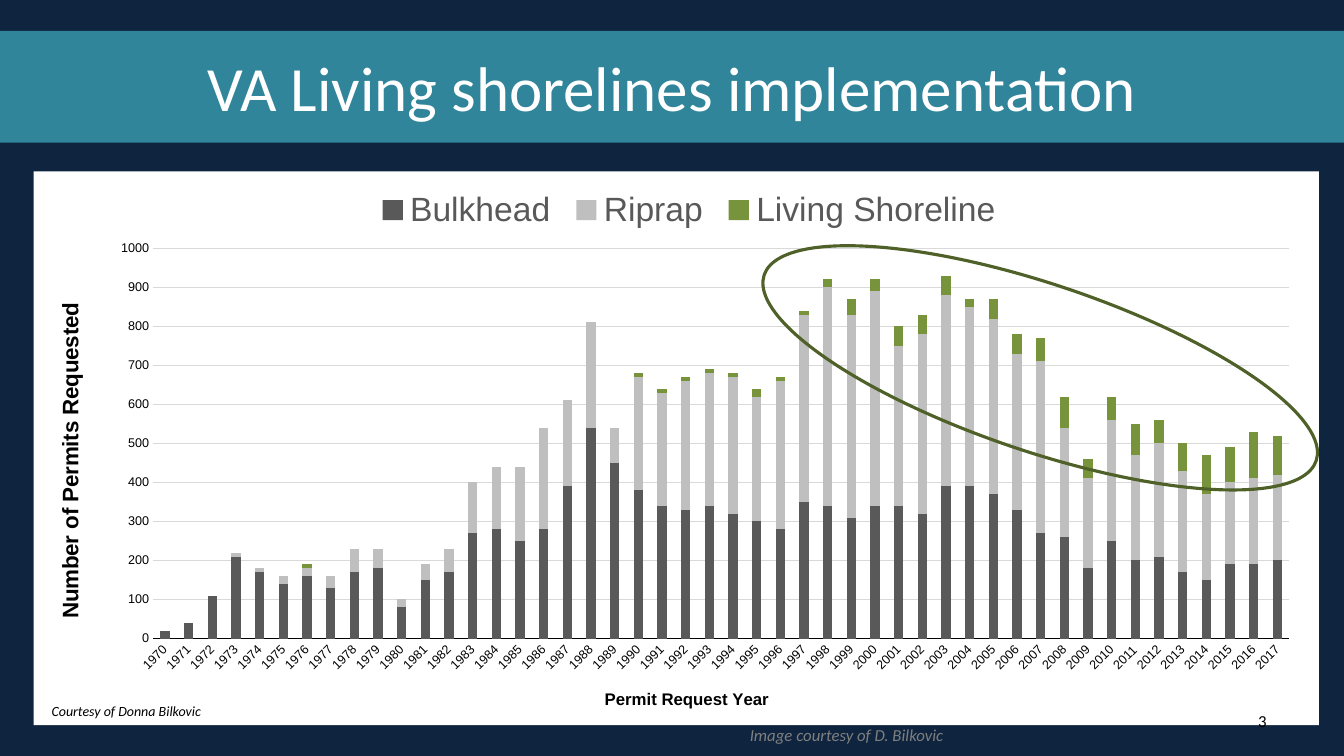
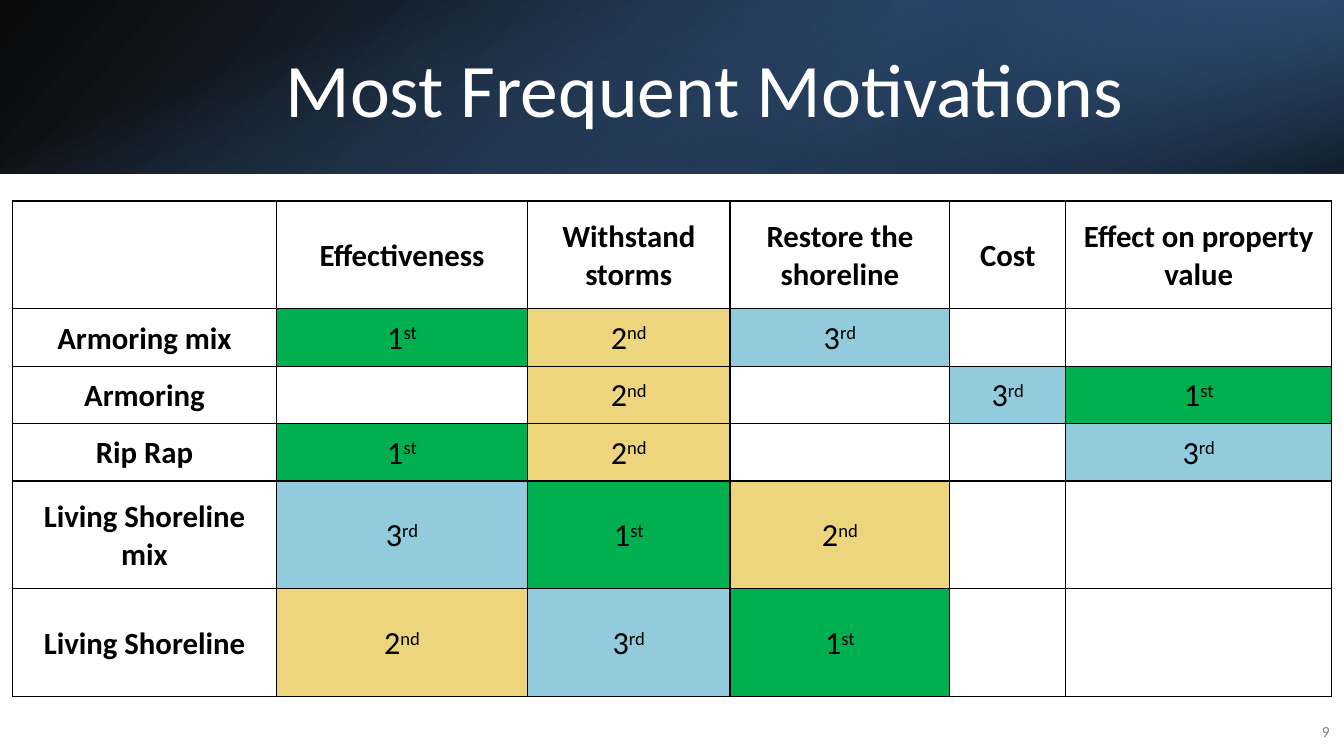
from dataclasses import dataclass
from typing import NamedTuple

import lxml.etree
import pptx
import pptx.chart.data
import pptx.dml.color
import pptx.enum.chart
import pptx.enum.shapes
import pptx.enum.text
import pptx.oxml
import pptx.oxml.ns
import pptx.util

Pt = pptx.util.Pt
qn = pptx.oxml.ns.qn
ALIGN = pptx.enum.text.PP_ALIGN
ANCHOR = pptx.enum.text.MSO_ANCHOR
SHAPE = pptx.enum.shapes.MSO_SHAPE
XL = pptx.enum.chart

COLORS = {
    "navy": "0F243E", "teal": "31859B", "white": "FFFFFF", "black": "000000",
    "gray": "7F7F7F", "dark_gray": "595959", "silver": "BFBFBF", "grid": "D9D9D9",
    "olive": "77933C", "dark_olive": "4F6128", "green": "00B050", "sand": "EDD57E",
    "sky": "92CCDC", "deep_blue": "244061", "mid_blue": "366092", "blue": "4F81BD",
}
SLIDE_W, SLIDE_H = 960, 540
HEADER_H = 123.8


class Box(NamedTuple):
    x: float
    y: float
    w: float
    h: float


class Stop(NamedTuple):
    pos: int
    color: str
    alpha: int


class Series(NamedTuple):
    name: str
    color: str
    values: tuple[int, ...]


class Rank(NamedTuple):
    digit: str
    suffix: str
    color: str


@dataclass(frozen=True)
class Label:
    text: str
    box: Box
    size: float
    color: str = "black"
    align: ALIGN = ALIGN.RIGHT
    anchor: ANCHOR = ANCHOR.MIDDLE
    italic: bool = False


@dataclass(frozen=True)
class GradientPanel:
    box: Box
    angle: int
    stops: tuple[Stop, ...]
    rotation: int = 0
    flip: bool = True


FIRST_YEAR = 1970
PERMITS = (
    Series("Bulkhead", "dark_gray", (
        20, 40, 110, 210, 170, 140, 160, 130, 170, 180, 80, 150, 170, 270, 280, 250,
        280, 390, 540, 450, 380, 340, 330, 340, 320, 300, 280, 350, 340, 310, 340, 340,
        320, 390, 390, 370, 330, 270, 260, 180, 250, 200, 210, 170, 150, 190, 190, 200)),
    Series("Riprap", "silver", (
        0, 0, 0, 10, 10, 20, 20, 30, 60, 50, 20, 40, 60, 130, 160, 190,
        260, 220, 270, 90, 290, 290, 330, 340, 350, 320, 380, 480, 560, 520, 550, 410,
        460, 490, 460, 450, 400, 440, 280, 230, 310, 270, 290, 260, 220, 210, 220, 220)),
    Series("Living Shoreline", "olive", (
        0, 0, 0, 0, 0, 0, 10, 0, 0, 0, 0, 0, 0, 0, 0, 0,
        0, 0, 0, 0, 10, 10, 10, 10, 10, 20, 10, 10, 20, 40, 30, 50,
        50, 50, 20, 50, 50, 60, 80, 50, 60, 80, 60, 70, 100, 90, 120, 100)),
)

HEADER_PANELS = (
    GradientPanel(Box(0, 0, SLIDE_W, HEADER_H), 140,
                  (Stop(0, "black", 96), Stop(100, "mid_blue", 100))),
    GradientPanel(Box(640, 0, 320, HEADER_H), 320,
                  (Stop(0, "deep_blue", 68), Stop(19, "deep_blue", 68), Stop(100, "blue", 79)),
                  rotation=180),
    GradientPanel(Box((SLIDE_W - HEADER_H) / 2, (HEADER_H - SLIDE_W) / 2, HEADER_H, SLIDE_W), 340,
                  (Stop(0, "blue", 0), Stop(23, "blue", 0),
                   Stop(99, "black", 74), Stop(100, "black", 74)),
                  rotation=90, flip=False),
)

RANKS = {
    1: Rank("1", "st", "green"),
    2: Rank("2", "nd", "sand"),
    3: Rank("3", "rd", "sky"),
}
MOTIVATIONS = ("", "Effectiveness", "Withstand storms", "Restore the shoreline",
               "Cost", "Effect on property value")
ANSWERS = (
    ("Armoring mix", 1, 2, 3, 0, 0),
    ("Armoring", 0, 2, 0, 3, 1),
    ("Rip Rap", 1, 2, 0, 0, 3),
    ("Living Shoreline mix", 3, 1, 2, 0, 0),
    ("Living Shoreline", 2, 3, 1, 0, 0),
)
COL_WIDTHS = (188.6, 179.3, 144.7, 157, 82.8, 190.1)
ROW_HEIGHTS = (77, 41, 41, 41, 77, 77)


def rgb(name: str):
    return pptx.dml.color.RGBColor.from_string(COLORS[name])


def pts(box: Box) -> list:
    return [Pt(v) for v in box]


def style_font(font, size: float, color: str, name: str = "Calibri",
               bold: bool = False, italic: bool = False) -> None:
    font.name, font.size, font.bold, font.italic = name, Pt(size), bold, italic
    font.color.rgb = rgb(color)


def add_run(p, text: str, size: float, color: str = "black", **style):
    r = p.add_run()
    r.text = text
    style_font(r.font, size, color, **style)
    return r


def add_label(s, label: Label) -> None:
    tf = s.shapes.add_textbox(*pts(label.box)).text_frame
    tf.word_wrap = True
    tf.vertical_anchor = label.anchor
    p = tf.paragraphs[0]
    p.alignment = label.align
    add_run(p, label.text, label.size, label.color, italic=label.italic)


def add_title(s, text: str, box: Box, size: float) -> None:
    add_label(s, Label(text, box, size, "white", ALIGN.CENTER))


def add_plain_shape(s, kind, box: Box):
    sp = s.shapes.add_shape(kind, *pts(box))
    sp.shadow.inherit = False
    sp.line.fill.background()
    return sp


def add_panel(s, panel: GradientPanel) -> None:
    sp = add_plain_shape(s, SHAPE.RECTANGLE, panel.box)
    sp.rotation = panel.rotation
    spPr = sp._element.spPr
    if panel.flip:
        spPr.find(qn("a:xfrm")).set("flipH", "1")
    grad = lxml.etree.Element(qn("a:gradFill"), rotWithShape="1")
    stops = lxml.etree.SubElement(grad, qn("a:gsLst"))
    for stop in panel.stops:
        gs = lxml.etree.SubElement(stops, qn("a:gs"), pos=str(stop.pos * 1000))
        color = lxml.etree.SubElement(gs, qn("a:srgbClr"), val=COLORS[stop.color])
        lxml.etree.SubElement(color, qn("a:alpha"), val=str(stop.alpha * 1000))
    lxml.etree.SubElement(grad, qn("a:lin"), ang=str(panel.angle * 60000), scaled="0")
    spPr.find(qn("a:prstGeom")).addnext(grad)


def set_layout(parent, index: int, **values) -> None:
    for old in parent.findall(qn("c:layout")):
        parent.remove(old)
    layout = lxml.etree.Element(qn("c:layout"))
    manual = lxml.etree.SubElement(layout, qn("c:manualLayout"))
    for tag, value in values.items():
        lxml.etree.SubElement(manual, qn(f"c:{tag}"), val=str(value))
    parent.insert(index, layout)


def style_axis(axis, title: str, size: float, x: float, y: float) -> None:
    add_run(axis.axis_title.text_frame.paragraphs[0], title, size, name="Arial", bold=True)
    set_layout(axis.axis_title._element, 1, xMode="edge", yMode="edge", x=x, y=y)
    axis.major_tick_mark = axis.minor_tick_mark = XL.XL_TICK_MARK.NONE
    style_font(axis.tick_labels.font, 9, "black", "Arial")


def add_permit_chart(s, box: Box) -> None:
    data = pptx.chart.data.CategoryChartData()
    data.categories = [str(FIRST_YEAR + i) for i in range(len(PERMITS[0].values))]
    for series in PERMITS:
        data.add_series(series.name, series.values)
    chart = s.shapes.add_chart(XL.XL_CHART_TYPE.COLUMN_STACKED, *pts(box), data).chart
    chart.has_title = False
    style_font(chart.font, 10, "black", "Arial")

    spPr = lxml.etree.Element(qn("c:spPr"))
    fill = lxml.etree.SubElement(spPr, qn("a:solidFill"))
    lxml.etree.SubElement(fill, qn("a:srgbClr"), val=COLORS["white"])
    line = lxml.etree.SubElement(spPr, qn("a:ln"))
    lxml.etree.SubElement(line, qn("a:noFill"))
    chart._chartSpace.find(qn("c:txPr")).addprevious(spPr)
    set_layout(chart._chartSpace.chart.plotArea, 0, layoutTarget="inner",
               xMode="edge", yMode="edge", x=0.093, y=0.139, w=0.884, h=0.705)

    chart.has_legend = True
    chart.legend.position = XL.XL_LEGEND_POSITION.TOP
    chart.legend.include_in_layout = False
    style_font(chart.legend.font, 24, "dark_gray", "Arial")
    set_layout(chart.legend._element, 1, xMode="edge", yMode="edge",
               x=0.26, y=0.03, w=0.5, h=0.08)

    plot = chart.plots[0]
    plot.gap_width, plot.overlap, plot.vary_by_categories = 150, 100, False
    for bars, series in zip(plot.series, PERMITS):
        bars.format.fill.solid()
        bars.format.fill.fore_color.rgb = rgb(series.color)

    years, counts = chart.category_axis, chart.value_axis
    style_axis(years, "Permit Request Year", 12, 0.442, 0.93)
    style_axis(counts, "Number of Permits Requested", 16, 0.014, 0.23)
    years.tick_labels.font._element.getparent().getparent().getparent().find(
        qn("a:bodyPr")).set("rot", "-2700000")
    years.format.line.color.rgb = rgb("black")
    years.format.line.width = Pt(0.75)
    counts.format.line.fill.background()
    counts.minimum_scale, counts.maximum_scale, counts.major_unit = 0, 1000, 100
    counts.major_gridlines.format.line.color.rgb = rgb("grid")
    counts.major_gridlines.format.line.width = Pt(0.75)


def style_cell(cell, color: str):
    cell.margin_left = cell.margin_right = Pt(10.8)
    cell.margin_top, cell.margin_bottom = Pt(1.44), Pt(0)
    cell.vertical_anchor = ANCHOR.MIDDLE
    cell.fill.solid()
    cell.fill.fore_color.rgb = rgb(color)
    tcPr = cell._tc.get_or_add_tcPr()
    for i, side in enumerate(("lnL", "lnR", "lnT", "lnB")):
        ln = lxml.etree.Element(qn(f"a:{side}"), w=str(Pt(1)))
        fill = lxml.etree.SubElement(ln, qn("a:solidFill"))
        lxml.etree.SubElement(fill, qn("a:srgbClr"), val=COLORS["black"])
        tcPr.insert(i, ln)
    p = cell.text_frame.paragraphs[0]
    p.alignment = ALIGN.CENTER
    return p


def add_motivation_table(s, x: float, y: float) -> None:
    rows = (MOTIVATIONS, *ANSWERS)
    box = Box(x, y, sum(COL_WIDTHS), sum(ROW_HEIGHTS))
    table = s.shapes.add_table(len(rows), len(MOTIVATIONS), *pts(box)).table
    table.first_row = table.horz_banding = False
    for col, width in zip(table.columns, COL_WIDTHS):
        col.width = Pt(width)
    for row, height in zip(table.rows, ROW_HEIGHTS):
        row.height = Pt(height)
    for i, row in enumerate(rows):
        for j, value in enumerate(row):
            rank = RANKS.get(value)
            p = style_cell(table.cell(i, j), rank.color if rank else "white")
            if rank:
                add_run(p, rank.digit, 23)
                r = add_run(p, rank.suffix, 23)
                r._r.get_or_add_rPr().set("baseline", "30000")
            elif value:
                add_run(p, value, 22, bold=True)


def add_slide(prs, background: str):
    s = prs.slides.add_slide(prs.slide_layouts[6])
    s.background.fill.solid()
    s.background.fill.fore_color.rgb = rgb(background)
    return s


def build_implementation(prs) -> None:
    s = add_slide(prs, "navy")
    add_permit_chart(s, Box(24, 122.4, 918, 395.5))
    add_label(s, Label("3", Box(688, 500.4, 223.9, 28.8), 12))
    add_label(s, Label("Courtesy of Donna Bilkovic", Box(8.8, 493.2, 141.8, 28.8), 10, italic=True))
    band_box = Box(0, 22, SLIDE_W, 80)
    band = add_plain_shape(s, SHAPE.RECTANGLE, band_box)
    band.fill.solid()
    band.fill.fore_color.rgb = rgb("teal")
    add_title(s, "VA Living shorelines implementation", band_box, 45)
    add_label(s, Label("Image courtesy of D. Bilkovic", Box(528.5, 514, 189.4, 21.6), 12, "gray",
                       align=ALIGN.LEFT, anchor=ANCHOR.TOP, italic=True))
    ring = add_plain_shape(s, SHAPE.OVAL, Box(535, 203, 416, 119.5))
    ring.rotation = 18.6
    ring.fill.background()
    ring.line.color.rgb = rgb("dark_olive")
    ring.line.width = Pt(2.25)


def build_motivations(prs) -> None:
    s = add_slide(prs, "white")
    for panel in HEADER_PANELS:
        add_panel(s, panel)
    add_title(s, "Most Frequent Motivations", Box(108, 27.7, 790.6, 69), 54)
    add_label(s, Label("9", Box(921.6, 508.3, 35.3, 28.8), 11, "gray"))
    add_motivation_table(s, 8.9, 143.6)


def main() -> None:
    prs = pptx.Presentation()
    prs.slide_width, prs.slide_height = Pt(SLIDE_W), Pt(SLIDE_H)
    build_implementation(prs)
    build_motivations(prs)
    prs.save("out.pptx")


if __name__ == "__main__":
    main()
